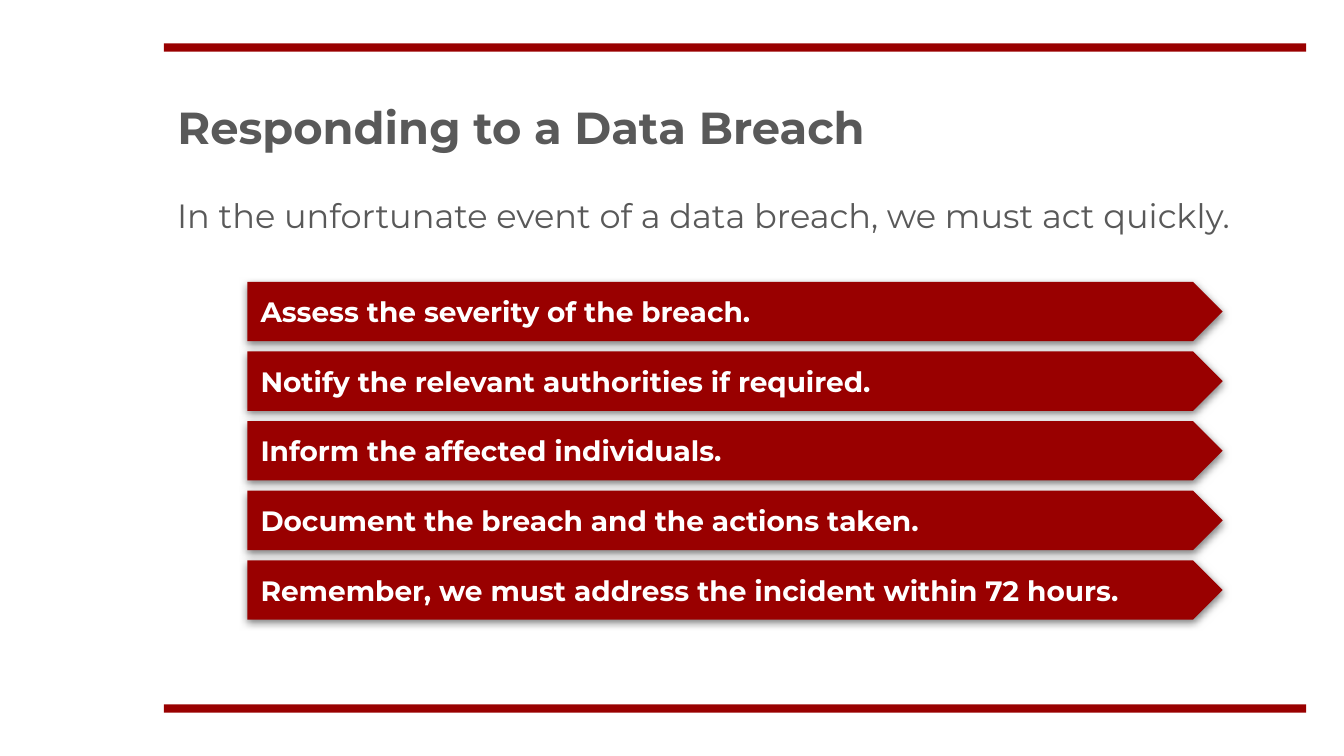
from pptx import Presentation
from pptx.dml.color import RGBColor
from pptx.enum.shapes import MSO_SHAPE as Preset
from pptx.enum.text import MSO_ANCHOR as Anchor, MSO_AUTO_SIZE as AutoSize, PP_ALIGN as Align
from pptx.oxml import parse_xml
from pptx.oxml.ns import nsdecls, qn
from pptx.util import Pt

COLORS = {"accent": "990000", "text": "595959", "on_accent": "FFFFFF", "shadow": "000000"}
FONT = "Montserrat"
LEFT, WIDTH = 87.8, 612
INSET = 7.2

STEPS = [
    "Assess the severity of the breach.",
    "Notify the relevant authorities if required.",
    "Inform the affected individuals.",
    "Document the breach and the actions taken.",
    "Remember, we must address the incident within 72 hours.",
]


def color(name):
    return RGBColor.from_string(COLORS[name])


def write(shape, text, size, color_name, bold=False, anchor=Anchor.TOP):
    frame = shape.text_frame
    frame.word_wrap = True
    frame.auto_size = AutoSize.NONE
    frame.vertical_anchor = anchor
    frame.margin_left = frame.margin_right = Pt(INSET)
    frame.margin_top = frame.margin_bottom = Pt(INSET)
    paragraph = frame.paragraphs[0]
    paragraph.text = text
    paragraph.alignment = Align.LEFT
    font = paragraph.font
    font.name, font.size, font.bold = FONT, Pt(size), bold
    font.color.rgb = color(color_name)


def add_block(slide, preset, left, top, width, height):
    shape = slide.shapes.add_shape(preset, Pt(left), Pt(top), Pt(width), Pt(height))
    shape.fill.solid()
    shape.fill.fore_color.rgb = color("accent")
    shape.line.fill.background()
    shape.shadow.inherit = False
    return shape


def add_soft_shadow(shape):
    effects = shape._element.spPr.find(qn("a:effectLst"))
    effects.append(parse_xml(
        f'<a:outerShdw {nsdecls("a")} blurRad="{Pt(4.5)}" dist="{Pt(1.5)}" dir="5400000"'
        f' algn="bl" rotWithShape="0"><a:srgbClr val="{COLORS["shadow"]}">'
        '<a:alpha val="50000"/></a:srgbClr></a:outerShdw>'))


def add_title(slide, text):
    title = slide.shapes.title
    title.left, title.top = Pt(LEFT), Pt(46.1)
    title.width, title.height = Pt(WIDTH), Pt(44)
    write(title, text, 24, "text", bold=True)


def add_lead(slide, text):
    box = slide.shapes.add_textbox(Pt(LEFT), Pt(97.2), Pt(WIDTH), Pt(36.5))
    write(box, text, 18, "text")


def add_step(slide, top, text):
    arrow = add_block(slide, Preset.PENTAGON, 132.5, top, 522.5, 31.8)
    arrow.adjustments[0] = 0.5
    add_soft_shadow(arrow)
    write(arrow, text, 15, "on_accent", bold=True, anchor=Anchor.MIDDLE)


def main():
    presentation = Presentation()
    presentation.slide_width, presentation.slide_height = Pt(720), Pt(405)
    slide = presentation.slides.add_slide(presentation.slide_layouts[5])

    # Rules above and below the content
    for top in (23.2, 377.3):
        add_block(slide, Preset.RECTANGLE, LEFT, top, WIDTH, 4.5)

    # Heading and lead sentence
    add_title(slide, "Responding to a Data Breach")
    add_lead(slide, "In the unfortunate event of a data breach, we must act quickly.")

    # Response steps at an even pitch
    for index, step in enumerate(STEPS):
        add_step(slide, 151 + index * 37.3, step)

    presentation.save("out.pptx")


if __name__ == "__main__":
    main()
